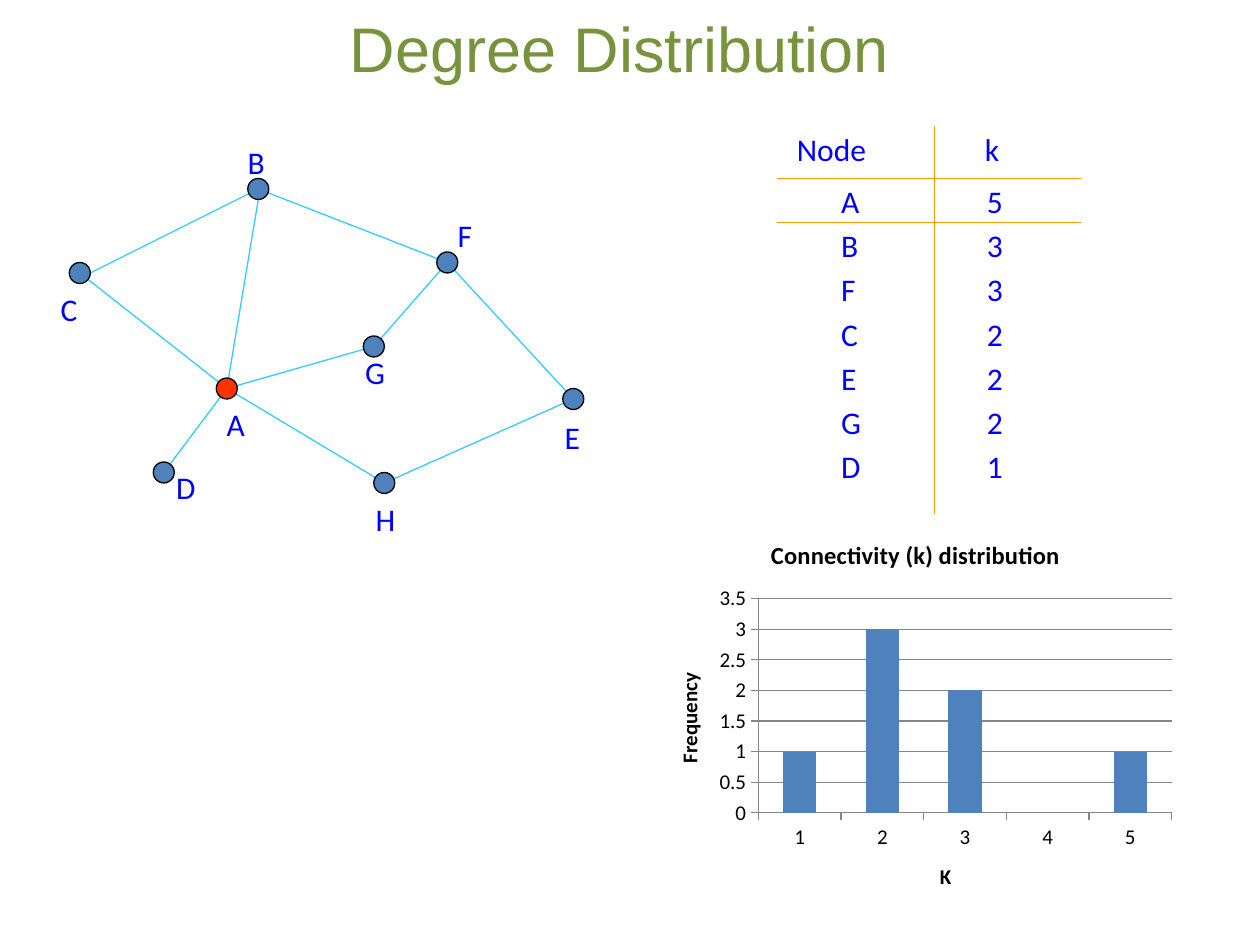
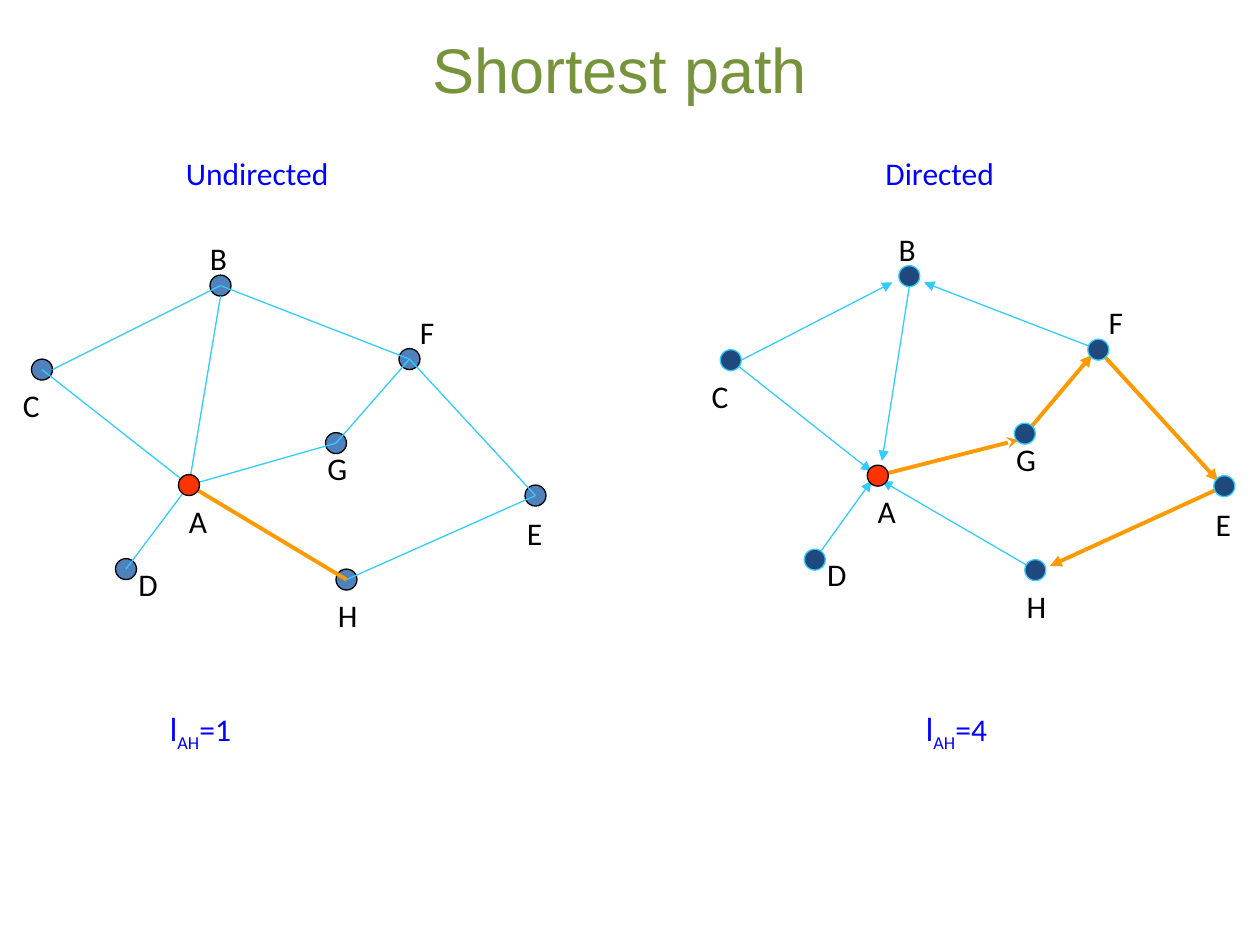
from pptx import Presentation
from pptx.chart.data import CategoryChartData as ChartData
from pptx.dml.color import RGBColor as Rgb
from pptx.enum.chart import XL_CHART_TYPE as ChartType, XL_TICK_MARK as Tick
from pptx.enum.shapes import MSO_CONNECTOR as Connector, MSO_SHAPE as Shape
from pptx.enum.text import MSO_ANCHOR as Anchor, MSO_AUTO_SIZE as AutoSize, PP_ALIGN as Align
from pptx.oxml.ns import qn
from pptx.oxml.xmlchemy import OxmlElement as Element
from pptx.util import Emu, Pt

PX = 7620  # 120 px to the inch
RADIUS = 10
COLOURS = {
    "title": "77933C", "text": "0000FF", "black": "000000",
    "edge": "33CCFF", "route": "FF9900", "grid": "868686",
    "node": "4F81BD", "dark node": "1F497D", "hub": "FF3300",
}
NO_STYLE_TABLE = "{2D5ABB26-0587-4C30-8999-92F81FD0307C}"

# Node centres, measured from node A
NODES = {
    "C": (-140, -110), "B": (30, -190), "G": (140, -40), "F": (210, -120),
    "E": (330, 10), "H": (150, 90), "D": (-60, 80), "A": (0, 0),
}
# Label corners, measured from the centre of the node
LABELS = {
    "A": (-12, 10), "B": (-22, -50), "C": (-30, 10), "D": (0, -10),
    "G": (-20, 0), "F": (-2, -50), "H": (-20, 10), "E": (-20, 12),
}
# start node, end node, shift of the start, shift of the end
UNDIRECTED = [
    ("C", "A", (0, 0), (0, 0)), ("B", "A", (0, 10), (0, 0)),
    ("C", "B", (10, 0), (0, 0)), ("B", "F", (0, 0), (0, 0)),
    ("G", "F", (0, 0), (0, 0)), ("A", "G", (0, 0), (0, 0)),
    ("A", "D", (0, 0), (0, 0)), ("A", "H", (0, 0), (0, 0)),
    ("H", "E", (0, 0), (0, 0)), ("E", "F", (0, 0), (0, 0)),
]
DIRECTED = [
    ("C", "A", (0, 0), (-6, -4)), ("B", "A", (0, 10), (4, -14)),
    ("C", "B", (10, 0), (-16, 6)), ("F", "B", (0, 0), (14, 6)),
    ("G", "F", (4, -4), (-6, 5)), ("A", "G", (0, 0), (-6, 6)),
    ("D", "A", (0, 0), (-6, 5)), ("H", "A", (0, 0), (4, 5)),
    ("E", "H", (0, 0), (14, -4)), ("F", "E", (0, 0), (-6, -5)),
]
DEGREES = [("A", 5), ("B", 3), ("F", 3), ("C", 2), ("E", 2), ("G", 2), ("D", 1)]
FREQUENCIES = {1: 1, 2: 3, 3: 2, 4: 0, 5: 1}


def px(*lengths):
    return [Emu(length * PX) for length in lengths]


def rgb(name):
    return Rgb.from_string(COLOURS[name])


def set_all(target, **values):
    for name, value in values.items():
        setattr(target, name, value)


def set_font(font, colour, size, name="Calibri", bold=False):
    set_all(font, name=name, size=Pt(size), bold=bold)
    font.color.rgb = rgb(colour)


def set_line(line, colour, width=0.75):
    line.color.rgb = rgb(colour)
    line.width = Pt(width)


def add_text(page, text, place, colour="text", size=18, font="Calibri", centred=False):
    box = page.shapes.add_textbox(*px(*place))
    frame = box.text_frame
    set_all(frame, word_wrap=centred,
            auto_size=AutoSize.NONE if centred else AutoSize.SHAPE_TO_FIT_TEXT,
            vertical_anchor=Anchor.MIDDLE if centred else Anchor.TOP)
    para = frame.paragraphs[0]
    para.alignment = Align.CENTER if centred else Align.LEFT
    span = para.add_run()
    span.text = text
    set_font(span.font, colour, size, font)
    return para


def add_title(page, text, top):
    add_text(page, text, (250, top, 680, 90), "title", 36, "Arial", centred=True)


def add_path_length(page, left, length):
    para = add_text(page, "l", (left, 670, 119, 60), font="Lato")
    for text, baseline in (("AH", "-25000"), (f"={length}", "0")):
        span = para.add_run()
        span.text = text
        set_font(span.font, "text", 18)
        span.font._element.set("baseline", baseline)


def add_edge(page, start, end, colour="edge", width=0.75, arrow=None):
    edge = page.shapes.add_connector(Connector.STRAIGHT, *px(*start, *end))
    set_line(edge.line, colour, width)
    if arrow:
        tail = Element("a:tailEnd")
        tail.set("type", arrow)
        edge.line._get_or_add_ln().append(tail)
    edge._element.spPr.append(Element("a:effectLst"))


def add_node(page, centre, fill, outline):
    x, y = centre
    node = page.shapes.add_shape(
        Shape.OVAL, *px(x - RADIUS, y - RADIUS, 2 * RADIUS, 2 * RADIUS))
    node.shadow.inherit = False
    node.fill.solid()
    node.fill.fore_color.rgb = rgb(fill)
    set_line(node.line, outline)


def shift(point, offset):
    return point[0] + offset[0], point[1] + offset[1]


def add_network(page, hub, edges, route=(), arrows=None, label_colour="black",
                fill="node", outline="black", nodes_behind=False):
    """Draw the graph with node A at hub; arrows maps an edge to its arrowhead."""
    centres = {name: shift(hub, offset) for name, offset in NODES.items()}

    def add_plain_nodes():
        for name, centre in centres.items():
            if name != "A":
                add_node(page, centre, fill, outline)

    if nodes_behind:
        add_plain_nodes()
    for start, end, start_shift, end_shift in edges:
        pair = start + end
        style = ("route", 2.25) if pair in route else ("edge", 0.75)
        add_edge(page, shift(centres[start], start_shift),
                 shift(centres[end], end_shift), *style,
                 arrow=arrows.get(pair, "triangle") if arrows else None)
    for name, offset in LABELS.items():
        add_text(page, name, (*shift(centres[name], offset), 42, 48), label_colour)
    if not nodes_behind:
        add_plain_nodes()
    add_node(page, centres["A"], "hub", "black")


def add_border(cell, side):
    border = Element(f"a:{side}")
    border.set("w", str(Pt(0.75)))
    fill, colour = Element("a:solidFill"), Element("a:srgbClr")
    colour.set("val", COLOURS["route"])
    fill.append(colour)
    border.append(fill)
    cell._tc.get_or_add_tcPr().append(border)


def add_degree_table(page):
    rows = [("Node", "k"), *DEGREES]
    heights = [50] + [42] * (len(DEGREES) - 1) + [68]
    table = page.shapes.add_table(
        len(rows), 2, *px(740, 120, 290, sum(heights))).table
    set_all(table, first_row=False, horz_banding=False)
    table._tbl.tblPr.find(qn("a:tableStyleId")).text = NO_STYLE_TABLE
    for column, width in zip(table.columns, px(150, 140)):
        column.width = width
    for index, values in enumerate(rows):
        table.rows[index].height = px(heights[index])[0]
        indents = (61, 50) if index else (19, 48)
        for column, value in enumerate(values):
            cell = table.cell(index, column)
            left, top, none = px(indents[column], 5, 0)
            set_all(cell, text=str(value), vertical_anchor=Anchor.TOP, margin_left=left,
                    margin_top=top, margin_right=none, margin_bottom=none)
            set_font(cell.text_frame.paragraphs[0].runs[0].font, "text", 18)
            add_border(cell, "lnL" if column else "lnR")
            if index < 2:
                add_border(cell, "lnT" if index else "lnB")
            cell.fill.background()


def set_chart_title(owner, text, size):
    """Title a chart or one of its axes."""
    owner.has_title = True
    title = owner.chart_title if hasattr(owner, "chart_title") else owner.axis_title
    title.text_frame.text = text
    set_font(title.text_frame.paragraphs[0].runs[0].font, "black", size, bold=True)


def add_frequency_chart(page):
    data = ChartData()
    data.categories = list(FREQUENCIES)
    data.add_series("Frequency", list(FREQUENCIES.values()))
    chart = page.shapes.add_chart(
        ChartType.COLUMN_CLUSTERED, *px(618, 494, 508, 379), data).chart
    chart.has_legend = False
    set_font(chart.font, "black", 18)
    set_chart_title(chart, "Connectivity (k) distribution", 14)
    for axis, name in ((chart.category_axis, "K"), (chart.value_axis, "Frequency")):
        set_chart_title(axis, name, 12)
        set_all(axis, major_tick_mark=Tick.OUTSIDE, minor_tick_mark=Tick.NONE)
        set_font(axis.tick_labels.font, "black", 12)
        set_line(axis.format.line, "grid")
    set_all(chart.value_axis, minimum_scale=0, maximum_scale=3.5, major_unit=0.5,
            has_major_gridlines=True)
    set_line(chart.value_axis.major_gridlines.format.line, "grid")
    plot = chart.plots[0]
    set_all(plot, gap_width=150, vary_by_categories=False)
    bars = plot.series[0].format.fill
    bars.solid()
    bars.fore_color.rgb = rgb("node")


def build_degree_page(page):
    add_title(page, "Degree Distribution", 0)
    add_network(page, (216, 370), UNDIRECTED, label_colour="text")
    add_degree_table(page)
    add_frequency_chart(page)


def build_path_page(page):
    add_title(page, "Shortest path", 20)
    add_network(page, (180, 462), UNDIRECTED, route=("AH",), nodes_behind=True)
    add_network(page, (836, 453), DIRECTED, route=("AG", "GF", "FE", "EH"),
                arrows={"AG": "stealth"}, fill="dark node", outline="edge")
    for text, left in (("Undirected", 60), ("Directed", 710)):
        add_text(page, text, (left, 120, 370, 90), centred=True)
    for left, length in ((150, 1), (870, 4)):
        add_path_length(page, left, length)


def main():
    deck = Presentation()
    width, height = px(1200, 900)
    set_all(deck, slide_width=width, slide_height=height)
    for build in (build_degree_page, build_path_page):
        build(deck.slides.add_slide(deck.slide_layouts[6]))
    deck.save("out.pptx")


if __name__ == "__main__":
    main()
